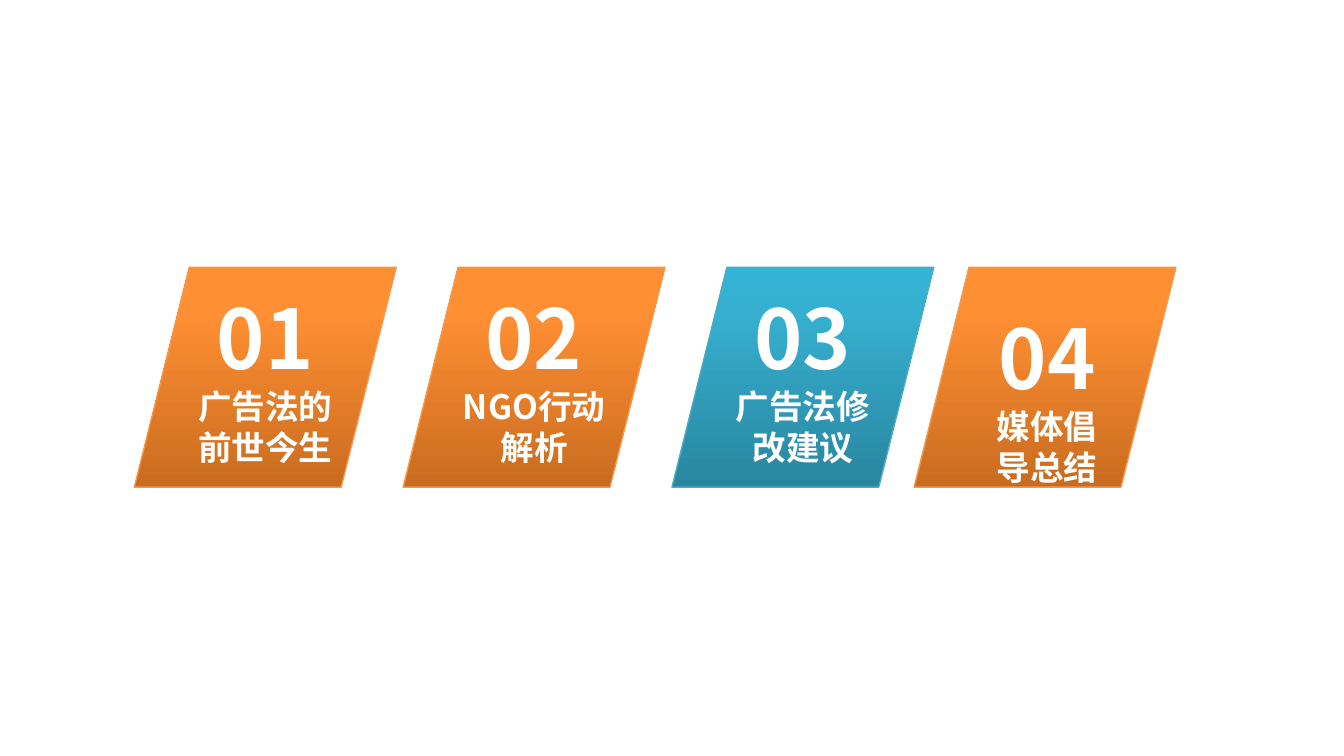
from copy import deepcopy

from lxml import etree
from pptx import Presentation
from pptx import util as u
from pptx.dml.color import RGBColor
from pptx.enum import shapes, text
from pptx.oxml.ns import qn

PX = 9525
FONT = "Noto Sans CJK SC"
COLORS = {
    "white": "FFFFFF",
    "orange": {"line": "F79646", "stops": ("C96C1F", "FF8F33", "FF8F35")},
    "blue": {"line": "4BACC6", "stops": ("29869F", "36B0D0", "33B3D5")},
}
STOP_POSITIONS = (0, 0.8, 1)
CARD_TOP, CARD_WIDTH, CARD_HEIGHT = 191, 187, 157


def px(*lengths):
    return [u.Emu(length * PX) for length in lengths]


def add_text(frame, lines, sizes, color="white", bold=True):
    for index, (line, size) in enumerate(zip(lines, sizes)):
        paragraph = frame.paragraphs[0] if index == 0 else frame.add_paragraph()
        paragraph.alignment = text.PP_ALIGN.CENTER
        run = paragraph.add_run()
        run.text = line
        run.font.size = u.Pt(size)
        run.font.bold = bold
        run.font.name = FONT
        run.font.color.rgb = RGBColor.from_string(COLORS[color])
        east_asian = etree.SubElement(run.font._element, qn("a:ea"))
        east_asian.set("typeface", FONT)


def fill_gradient(shape, colors):
    shape.fill.gradient()
    stop_list = shape._element.spPr.find(".//" + qn("a:gsLst"))
    stop_list.append(deepcopy(stop_list[-1]))
    shape.fill.gradient_angle = 90
    for stop, position, color in zip(shape.fill.gradient_stops, STOP_POSITIONS, colors):
        stop.position = position
        stop.color.rgb = RGBColor.from_string(color)


def add_card(slide, box, theme, lines=()):
    shape = slide.shapes.add_shape(shapes.MSO_SHAPE.PARALLELOGRAM, *px(*box))
    shape.adjustments[0] = 0.25
    shape.shadow.inherit = False
    fill_gradient(shape, COLORS[theme]["stops"])
    shape.line.color.rgb = RGBColor.from_string(COLORS[theme]["line"])
    shape.line.width = u.Pt(0.75)
    shape.text_frame.vertical_anchor = text.MSO_ANCHOR.MIDDLE
    add_text(shape.text_frame, lines, (44, 18))


def add_captioned_card(slide, box, theme, lines):
    left, top, width, height = box
    add_card(slide, box, theme)
    caption = slide.shapes.add_textbox(*px(left + 49, top + 24, 92, 139))
    frame = caption.text_frame
    frame.word_wrap = False
    frame.auto_size = text.MSO_AUTO_SIZE.SHAPE_TO_FIT_TEXT
    add_text(frame, lines, (44, 18, 18))


def main():
    presentation = Presentation()
    presentation.slide_width, presentation.slide_height = px(960, 540)
    slide = presentation.slides.add_slide(presentation.slide_layouts[6])
    cards = (
        (add_card, 96, "orange", ("01", "广告法的前世今生")),
        (add_card, 288, "orange", ("02", "NGO行动解析")),
        (add_captioned_card, 653, "orange", ("04", "媒体倡", "导总结")),
        (add_card, 480, "blue", ("03", "广告法修改建议")),
    )
    for add, left, theme, lines in cards:
        add(slide, (left, CARD_TOP, CARD_WIDTH, CARD_HEIGHT), theme, lines)
    presentation.save("out.pptx")


if __name__ == "__main__":
    main()
